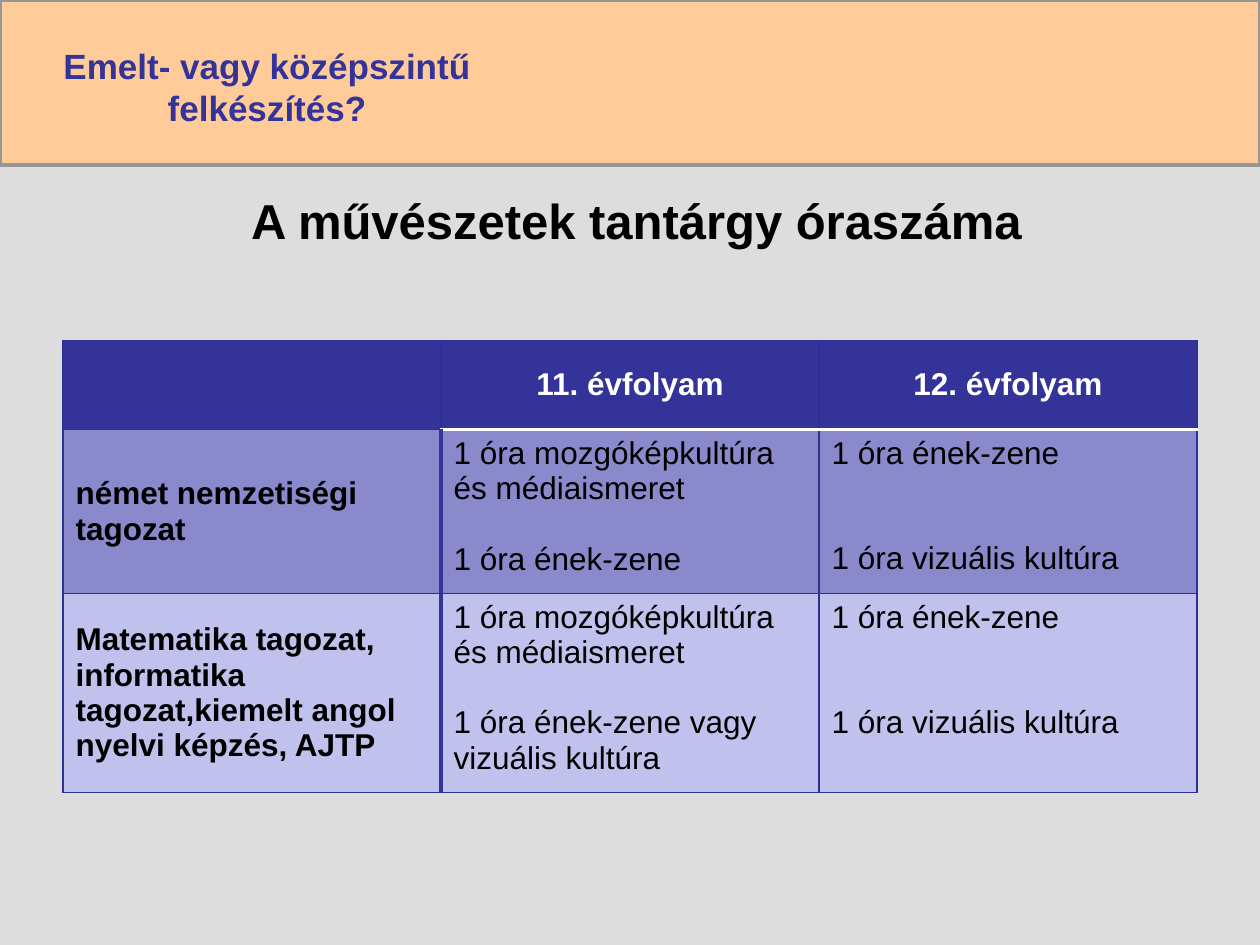
"""Build the slide on weekly arts lessons by class type and year."""
from pptx import Presentation
from pptx.dml.color import RGBColor as RGB
from pptx.enum.shapes import MSO_SHAPE as SHAPE
from pptx.enum.text import MSO_ANCHOR as ANCHOR, PP_ALIGN as ALIGN
from pptx.oxml import parse_xml
from pptx.oxml.ns import nsdecls
from pptx.util import Inches, Pt

INDIGO = RGB(0x33, 0x33, 0x99)
EDGE = RGB(0x2F, 0x2F, 0x98)
MID = RGB(0x89, 0x89, 0xCB)
PALE = RGB(0xC1, 0xC1, 0xED)
PEACH = RGB(0xFF, 0xCC, 0x99)
SILVER = RGB(0xDD, 0xDD, 0xDD)
GREY = RGB(0x96, 0x96, 0x96)
WHITE = RGB(0xFF, 0xFF, 0xFF)
BLACK = RGB(0, 0, 0)

W, H, BAND = 10, 7.5, 1.31
COL = 3
ROWS = [0.71, 1.3, 1.5]
LINE = 20


def write(tf, paras, align, gap=0, **fmt):
    tf.word_wrap = True
    for i, text in enumerate(paras):
        p = tf.paragraphs[0] if i == 0 else tf.add_paragraph()
        p.alignment = align
        if i:
            p.space_before = Pt(gap)
        r = p.add_run()
        r.text = text
        r.font.color.rgb = fmt["color"]
        for key, value in {"name": "Arial", "size": Pt(fmt["size"]), "bold": fmt["bold"]}.items():
            setattr(r.font, key, value)


def border(cell, side, color, width):
    cell._tc.get_or_add_tcPr().append(parse_xml(
        f'<a:ln{side} {nsdecls("a")} w="{Pt(width)}"><a:solidFill>'
        f'<a:srgbClr val="{color}"/></a:solidFill></a:ln{side}>'))


prs = Presentation()
prs.slide_width, prs.slide_height = Inches(W), Inches(H)
s = prs.slides.add_slide(prs.slide_layouts[6])

for top, height, fill, line in [(BAND, H - BAND, SILVER, None), (0, BAND, PEACH, GREY)]:
    sp = s.shapes.add_shape(SHAPE.RECTANGLE, 0, Inches(top), Inches(W), Inches(height))
    sp.shadow.inherit = False
    sp.fill.solid()
    sp.fill.fore_color.rgb = fill
    if line:
        sp.line.color.rgb = line
        sp.line.width = Pt(2)
    else:
        sp.line.fill.background()

for box, text, size, color in [
    ((0.27, 0.3, 3.7, 0.77), "Emelt- vagy középszintű felkészítés?", 20, INDIGO),
    ((0.51, 1.39, 9.08, 0.71), "A művészetek tantárgy óraszáma", 28, BLACK),
]:
    tf = s.shapes.add_textbox(*map(Inches, box)).text_frame
    tf.vertical_anchor = ANCHOR.MIDDLE
    write(tf, [text], ALIGN.CENTER, size=size, color=color, bold=True)

FILM = "1 óra mozgóképkultúra és médiaismeret"
MUSIC = "1 óra ének-zene"
ART = "1 óra vizuális kultúra"
CELLS = [
    [[], ["11. évfolyam"], ["12. évfolyam"]],
    [["német nemzetiségi tagozat"], [FILM, MUSIC], [MUSIC, ART]],
    [["Matematika tagozat, informatika tagozat,kiemelt angol nyelvi képzés, AJTP"],
     [FILM, "1 óra ének-zene vagy vizuális kultúra"], [MUSIC, ART]],
]
table = s.shapes.add_table(3, 3, Inches((W - 3 * COL) / 2), Inches(2.7),
                           Inches(3 * COL), Inches(sum(ROWS))).table
table.horz_banding = table.first_row = False
for column in table.columns:
    column.width = Inches(COL)
for i, row in enumerate(CELLS):
    table.rows[i].height = Inches(ROWS[i])
    for j, paras in enumerate(row):
        cell = table.cell(i, j)
        head = i == 0 or j == 0
        sides = {side: (EDGE, 0.75) for side in "LRTB"}
        if i and j < 2:
            sides["R" if j == 0 else "L"] = (INDIGO, 2)
        if j and i < 2:
            sides["B" if i == 0 else "T"] = (WHITE, 2)
        for side, (color, width) in sides.items():
            border(cell, side, color, width)
        cell.fill.solid()
        cell.fill.fore_color.rgb = (INDIGO, MID, PALE)[i]
        cell.vertical_anchor = ANCHOR.MIDDLE if head else ANCHOR.TOP
        write(cell.text_frame, paras, ALIGN.LEFT if i else ALIGN.CENTER, gap=LINE * j,
              size=18, color=BLACK if i else WHITE, bold=head)

prs.save("out.pptx")
